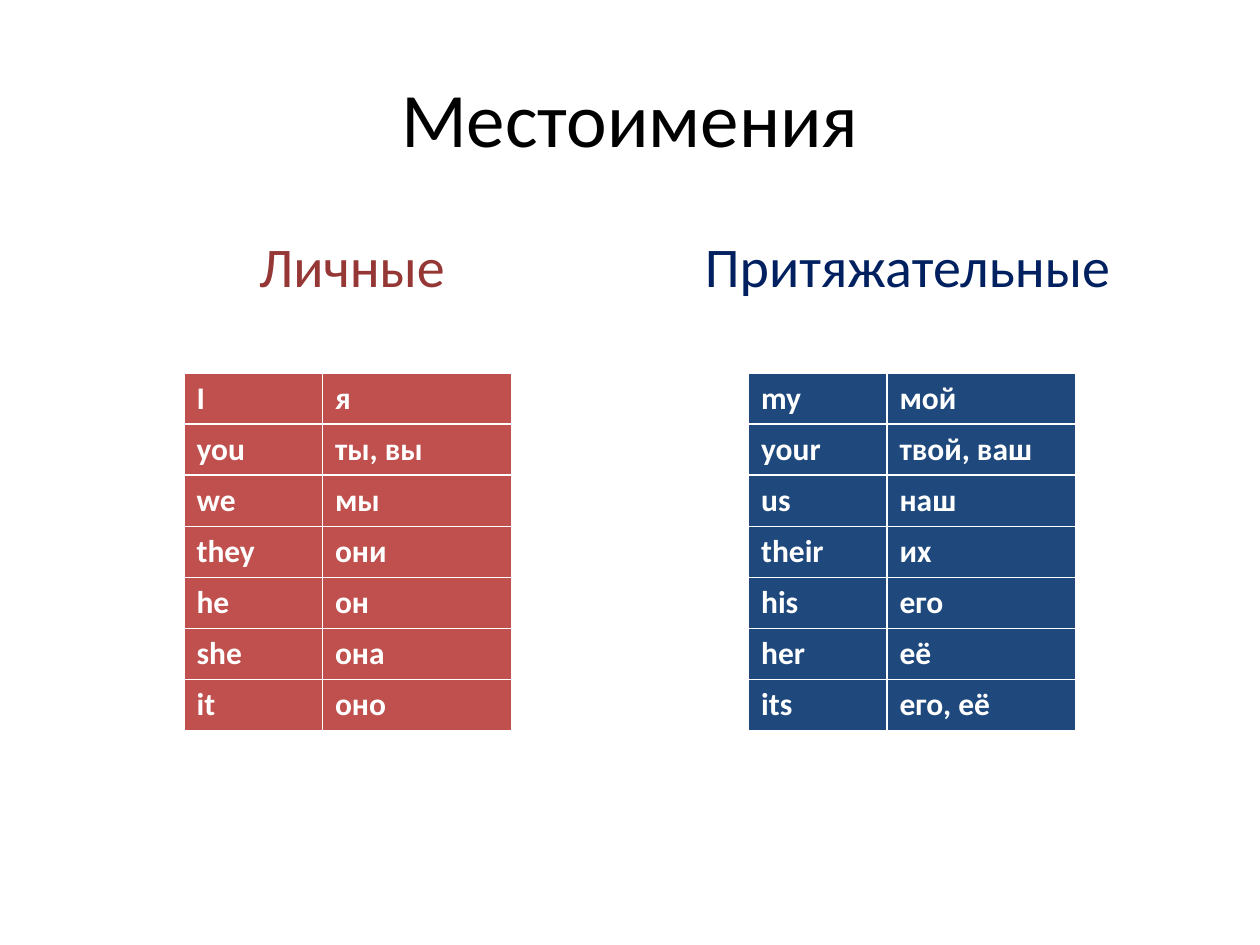
from pptx import Presentation
from pptx.dml.color import RGBColor
from pptx.enum.text import MSO_ANCHOR, PP_ALIGN
from pptx.oxml import parse_xml
from pptx.oxml.ns import nsdecls
from pptx.util import Cm, Pt

FONT = "Calibri"
BLACK = RGBColor(0x00, 0x00, 0x00)
WHITE = RGBColor(0xFF, 0xFF, 0xFF)
DARK_RED = RGBColor(0x95, 0x37, 0x35)
RED = RGBColor(0xC0, 0x50, 0x4D)
NAVY = RGBColor(0x00, 0x20, 0x60)
BLUE = RGBColor(0x1F, 0x49, 0x7D)

PERSONAL = [("I", "я"), ("you", "ты, вы"), ("we", "мы"), ("they", "они"),
            ("he", "он"), ("she", "она"), ("it", "оно")]
POSSESSIVE = [("my", "мой"), ("your", "твой, ваш"), ("us", "наш"), ("their", "их"),
              ("his", "его"), ("her", "её"), ("its", "его, её")]


def set_text(tf, text, size, color, align, bold=False):
    tf.text = text
    p = tf.paragraphs[0]
    p.alignment = align
    font = p.runs[0].font
    font.name, font.size, font.bold = FONT, Pt(size), bold
    font.color.rgb = color


def set_borders(cell):
    tcPr = cell._tc.get_or_add_tcPr()
    for i, side in enumerate(("lnL", "lnR", "lnT", "lnB")):
        tcPr.insert(i, parse_xml(
            f'<a:{side} {nsdecls("a")} w="12700"><a:solidFill>'
            f'<a:srgbClr val="{WHITE}"/></a:solidFill></a:{side}>'))


prs = Presentation()
prs.slide_width, prs.slide_height = Cm(25.4), Cm(19.05)
s = prs.slides.add_slide(prs.slide_layouts[5])

# Title
title = s.shapes.title
title.left, title.top, title.width, title.height = Cm(1.27), Cm(0.76), Cm(22.86), Cm(3.18)
title.text_frame.vertical_anchor = MSO_ANCHOR.MIDDLE
set_text(title.text_frame, "Местоимения", 44, BLACK, PP_ALIGN.CENTER)

# Two columns: heading above a table of pronouns
columns = [("Личные", DARK_RED, RED, PERSONAL, 1.5, 3.71),
           ("Притяжательные", NAVY, BLUE, POSSESSIVE, 12.7, 15.09)]
for heading, heading_color, fill, pronouns, heading_left, table_left in columns:
    box = s.shapes.add_textbox(Cm(heading_left), Cm(4.55), Cm(11.2), Cm(1.6))
    box.text_frame.word_wrap = True
    set_text(box.text_frame, heading, 32, heading_color, PP_ALIGN.CENTER)

    table = s.shapes.add_table(len(pronouns), 2, Cm(table_left), Cm(7.52),
                               Cm(6.6), Cm(1.03 * len(pronouns))).table
    table.columns[0].width, table.columns[1].width = Cm(2.79), Cm(3.81)
    for row, words in zip(table.rows, pronouns):
        row.height = Cm(1.03)
        for cell, word in zip(row.cells, words):
            set_text(cell.text_frame, word, 18, WHITE, PP_ALIGN.LEFT, bold=True)
            cell.fill.solid()
            cell.fill.fore_color.rgb = fill
            set_borders(cell)

prs.save("out.pptx")
